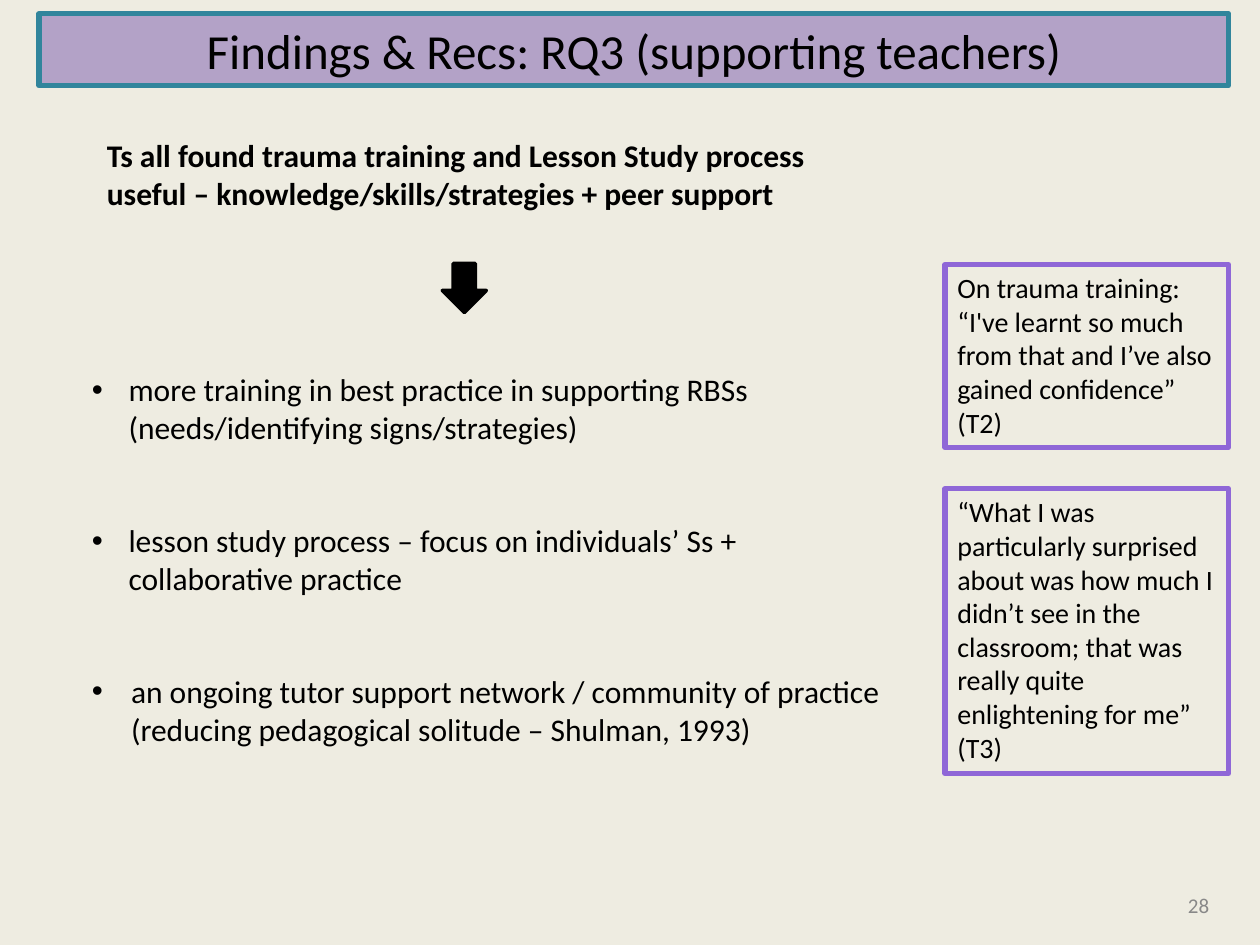
"""Build a findings slide with a title, an arrow, a bullet list and quotes."""
from typing import Any, NamedTuple, Optional

from pptx import Presentation
from pptx.dml.color import RGBColor as Rgb
from pptx.enum.shapes import MSO_SHAPE as Kind
from pptx.enum.text import MSO_ANCHOR as Anchor, MSO_AUTO_SIZE as Fit, PP_ALIGN as Align
from pptx.util import Inches, Pt

WIDTH, HEIGHT = Inches(10), Inches(7.5)
COLS, ROWS = 40, 30
HUES = {"paper": "EEECE1", "lilac": "B3A2C7", "teal": "31859C",
        "violet": "8F67D7", "ink": "000000", "grey": "888888"}


class Box(NamedTuple):
    """Place on the slide in grid columns and rows."""
    col: float
    row: float
    wide: float
    high: float


class Quote(NamedTuple):
    """A framed quotation."""
    box: Box
    text: str


QUOTES = [
    Quote(Box(30, 15.52, 9, 9.04),
          "“What I was particularly surprised about was how much I didn’t see in the "
          "classroom; that was really quite enlightening for me” (T3)"),
    Quote(Box(30, 8.4, 9, 5.8),
          "On trauma training: “I've learnt so much from that and I’ve also "
          "gained confidence” (T2)"),
]
POINTS = [
    ("more training in best practice in supporting RBSs "
     "(needs/identifying signs/strategies)", 0.29),
    ("lesson study process – focus on individuals’ Ss + collaborative practice", 0.29),
    ("an ongoing tutor support network / community of practice "
     "(reducing pedagogical solitude – Shulman, 1993)", 0.31),
]


def apply(item: Any, values: dict[str, Any]) -> None:
    """Set each named value on the item."""
    for name, value in values.items():
        setattr(item, name, value)


def span(box: Box) -> tuple[int, int, int, int]:
    """Turn grid units into slide lengths."""
    return (round(box.col * WIDTH / COLS), round(box.row * HEIGHT / ROWS),
            round(box.wide * WIDTH / COLS), round(box.high * HEIGHT / ROWS))


def move(shape: Any, box: Box) -> None:
    """Place a shape on the grid."""
    apply(shape, dict(zip(("left", "top", "width", "height"), span(box))))


def paint(shape: Any, fill: Optional[str], line: str, width: float) -> None:
    """Fill and outline a shape without a shadow."""
    if fill:
        shape.fill.solid()
        shape.fill.fore_color.rgb = Rgb.from_string(HUES[fill])
    else:
        shape.fill.background()
    shape.line.color.rgb = Rgb.from_string(HUES[line])
    shape.line.width = Pt(width)
    shape.shadow.inherit = False


def write(shape: Any, texts: list[str], size: float, hue: str = "ink", bold: bool = False,
          align: Align = Align.LEFT, anchor: Anchor = Anchor.TOP) -> None:
    """Write one formatted paragraph for each text."""
    frame = shape.text_frame
    frame.text = "\n".join(texts)
    apply(frame, {"word_wrap": True, "auto_size": Fit.NONE, "vertical_anchor": anchor})
    for para in frame.paragraphs:
        apply(para, {"alignment": align, "space_before": Pt(0)})
        font = para.runs[0].font
        apply(font, {"name": "Calibri", "size": Pt(size), "bold": bold})
        font.color.rgb = Rgb.from_string(HUES[hue])


def label(slide: Any, box: Box, text: str, size: float, **style: Any) -> None:
    """Add a plain text box."""
    write(slide.shapes.add_textbox(*span(box)), [text], size, **style)


def listing(body: Any) -> None:
    """Write the spaced bullet list."""
    move(body, Box(2.52, 10.32, 25.84, 14.96))
    write(body, [text for text, _ in POINTS], 18)
    body.text_frame.margin_top = Inches(0.36)
    for para, (_, indent) in zip(body.text_frame.paragraphs, POINTS):
        para.space_after = Pt(43)
        props = para._p.get_or_add_pPr()
        props.set("marL", str(Inches(indent)))
        props.set("indent", str(-Inches(indent)))


def main() -> None:
    """Draw and save the slide."""
    deck = Presentation()
    apply(deck, {"slide_width": WIDTH, "slide_height": HEIGHT})
    slide = deck.slides.add_slide(deck.slide_layouts[1])
    slide.background.fill.solid()
    slide.background.fill.fore_color.rgb = Rgb.from_string(HUES["paper"])

    title = slide.shapes.title
    move(title, Box(1.24, 0.44, 37.76, 2.28))
    paint(title, "lilac", "teal", 3)
    write(title, ["Findings & Recs: RQ3 (supporting teachers)"], 28,
          align=Align.CENTER, anchor=Anchor.MIDDLE)
    listing(slide.placeholders[1])

    arrow = slide.shapes.add_shape(Kind.DOWN_ARROW, *span(Box(14.04, 8.36, 1.4, 1.56)))
    paint(arrow, "ink", "ink", 2)
    for quote in QUOTES:
        frame = slide.shapes.add_shape(Kind.RECTANGLE, *span(quote.box))
        paint(frame, None, "violet", 3)
        write(frame, [quote.text], 16)

    label(slide, Box(3, 4.12, 25.36, 2.84),
          "Ts all found trauma training and Lesson Study process useful – "
          "knowledge/skills/strategies + peer support", 18, bold=True)
    label(slide, Box(37.32, 27.92, 2.28, 1.6), "28", 12, hue="grey", anchor=Anchor.MIDDLE)
    deck.save("out.pptx")


if __name__ == "__main__":
    main()
